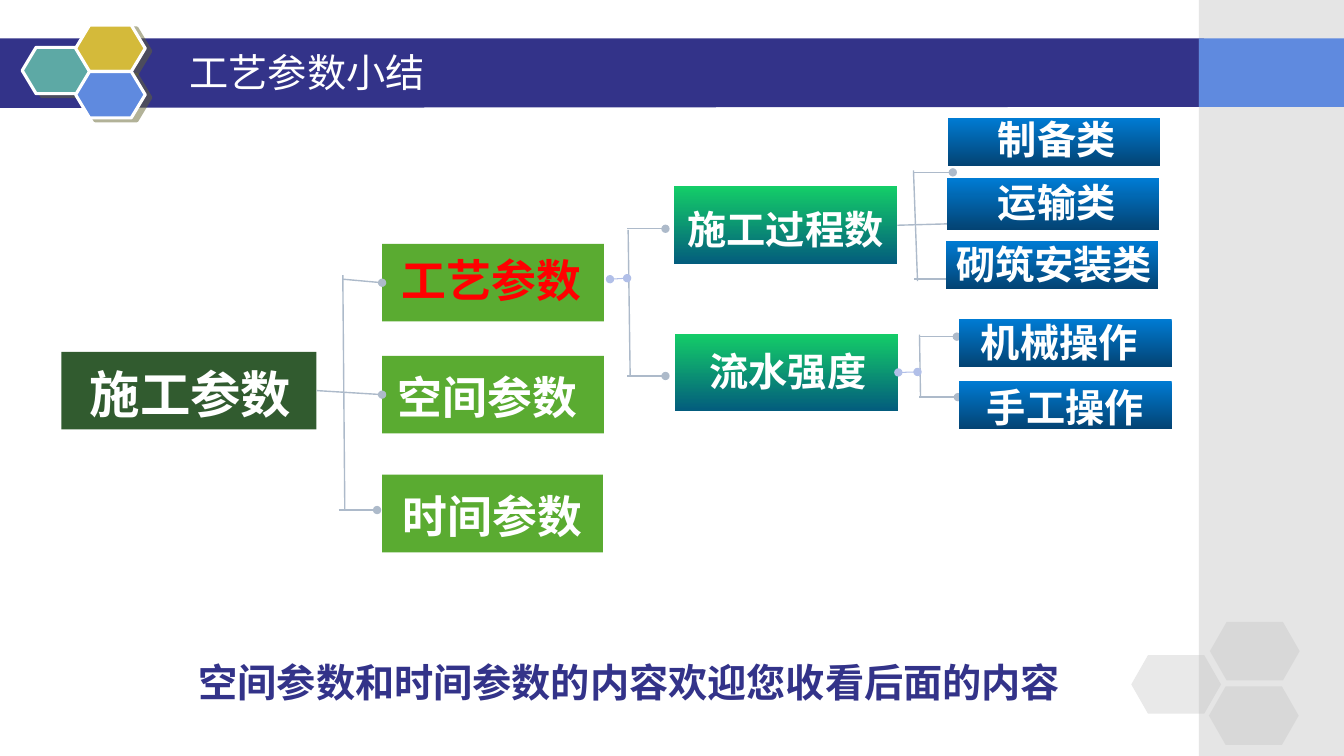
from lxml.etree import SubElement
from pptx import Presentation
from pptx.dml.color import RGBColor
from pptx.enum.shapes import MSO_CONNECTOR, MSO_SHAPE
from pptx.enum.text import MSO_ANCHOR, MSO_AUTO_SIZE, PP_ALIGN
from pptx.oxml.ns import qn
from pptx.util import Inches, Pt

COLS, ROWS = 133.3, 75
prs = Presentation()
prs.slide_width, prs.slide_height = Inches(13.33), Inches(7.5)
COL, ROW = prs.slide_width / COLS, prs.slide_height / ROWS
CJK, SERIF = "Noto Sans CJK SC", "Times New Roman"
NAVY, WHITE, SILVER, BLUE = "333389", "FFFFFF", "C0C0C0", "5F8ADF"
LINK, JOINT = "ADBACA", "B1BFE8"
LEAF = ("007BD3", "034373")
BRANCH = ("14CD68", "035C7D")
GREEN = ("5AAB31",)


def rgb(color):
    return RGBColor.from_string(color)


def place(box, x, y):
    return round((box[0] + x) * COL), round((box[1] + y) * ROW)


def frame(box, x, y, w, h):
    return *place(box, x, y), round(w * COL), round(h * ROW)


def set_alpha(color_el, percent):
    SubElement(color_el, qn("a:alpha")).set("val", str(percent * 1000))


def add_shape(s, kind, rect, fill, alpha=None):
    sp = s.shapes.add_shape(kind, *rect)
    sp.shadow.inherit = False
    sp.line.fill.background()
    if len(fill) == 2:
        sp.fill.gradient()
        sp.fill.gradient_angle = 270
        for stop, color, pos in zip(sp.fill.gradient_stops, fill, (0, 1)):
            stop.color.rgb = rgb(color)
            stop.position = pos
    else:
        sp.fill.solid()
        sp.fill.fore_color.rgb = rgb(fill[0])
    if alpha:
        set_alpha(sp._element.spPr.find(".//" + qn("a:srgbClr")), alpha)
    return sp


def add_run(p, text, size, color, font, bold):
    r = p.add_run()
    r.text = text
    r.font.size, r.font.bold, r.font.name = Pt(size), bold, font
    r.font.color.rgb = rgb(color)
    SubElement(r._r.get_or_add_rPr(), qn("a:ea")).set("typeface", CJK)


def add_label(s, rect, text, size, color, align=PP_ALIGN.CENTER, spacing=None):
    tf = s.shapes.add_textbox(*rect).text_frame
    tf.word_wrap = True
    tf.margin_left = tf.margin_right = tf.margin_top = tf.margin_bottom = 0
    p = tf.paragraphs[0]
    p.alignment, p.line_spacing = align, spacing
    add_run(p, text, size, color, SERIF, True)


def add_link(s, box, start, end, color=LINK, width=1, head=False, tail=False):
    c = s.shapes.add_connector(MSO_CONNECTOR.STRAIGHT, *place(box, *start), *place(box, *end))
    c.line.color.rgb = rgb(color)
    c.line.width = Pt(width)
    ln = c._element.spPr.find(qn("a:ln"))
    for tag, shown in (("a:headEnd", head), ("a:tailEnd", tail)):
        if shown:
            SubElement(ln, qn(tag)).set("type", "oval")
    SubElement(c._element.spPr, qn("a:effectLst"))
    return c


def add_side_panel(s, box):
    _, _, w, h = box
    add_shape(s, MSO_SHAPE.RECTANGLE, frame(box, 0, 0, w, h), (SILVER,), 40)
    add_shape(s, MSO_SHAPE.RECTANGLE, frame(box, 0, 3.8, w, 6.8), (BLUE,))
    for x, y in ((-6.7, 65), (1.1, 61.7), (1, 68.1)):
        sp = add_shape(s, MSO_SHAPE.HEXAGON, frame(box, x, y, 8.9, 5.8), (SILVER,), 35)
        sp.adjustments[0] = 0.286


def add_band(s, box):
    _, _, w, h = box
    fb = s.shapes.build_freeform(*place(box, 0, 0))
    fb.add_line_segments([place(box, w, 0), place(box, w - 0.1, h - 0.1), place(box, 0, h)])
    sp = fb.convert_to_shape()
    sp.shadow.inherit = False
    sp.fill.solid()
    sp.fill.fore_color.rgb = rgb(NAVY)
    sp.line.fill.background()


def add_emblem(s, box):
    for x, y, color in ((0, 2.2, "5DA9A5"), (5.3, 0, "D4BA3A"), (5.3, 4.6, BLUE)):
        sp = add_shape(s, MSO_SHAPE.HEXAGON, frame(box, x, y, 6.9, 4.6), (color,))
        sp.adjustments[0] = 0.3
        sp.line.color.rgb = rgb(WHITE)
        sp.line.width = Pt(2.25)
        shadow = SubElement(sp._element.spPr.find(qn("a:effectLst")), qn("a:outerShdw"))
        for key, val in (("dist", Pt(4.5)), ("dir", 27 * 60000), ("algn", "ctr"), ("rotWithShape", 0)):
            shadow.set(key, str(val))
        tint = SubElement(shadow, qn("a:srgbClr"))
        tint.set("val", "666633")
        set_alpha(tint, 50)


def add_title(s, box, text):
    title = s.shapes.title
    title.left, title.top, title.width, title.height = frame(box, 0, 0, *box[2:])
    tf = title.text_frame
    tf.auto_size, tf.word_wrap = MSO_AUTO_SIZE.NONE, True
    tf.vertical_anchor = MSO_ANCHOR.MIDDLE
    p = tf.paragraphs[0]
    p.alignment = PP_ALIGN.LEFT
    add_run(p, text, 28, WHITE, CJK, False)
    s.shapes._spTree.append(title._element)


def add_nodes(s, box, rows):
    nodes = {}
    for text, x, y, w, h, fill, size, color, dx, dy in rows:
        nodes[text] = add_shape(s, MSO_SHAPE.RECTANGLE, frame(box, x, y, w, h), fill)
        add_label(s, frame(box, x + dx, y + dy, w, size / 6), text, size, color)
    return nodes


def add_tree(s, box):
    nodes = add_nodes(s, box, (
        ("施工参数", 0.1, 23.9, 25.3, 7.7, ("315B2F",), 36, WHITE, 0.15, 1.1),
        ("工艺参数", 31.9, 13.2, 22, 7.7, GREEN, 32, "FF0000", -0.15, 0.9),
        ("空间参数", 31.9, 24.3, 22, 7.7, GREEN, 32, WHITE, -0.55, 1.4),
        ("时间参数", 31.9, 36.1, 21.9, 7.7, GREEN, 32, WHITE, 0, 1.4),
        ("施工过程数", 60.8, 7.5, 22.2, 7.7, BRANCH, 28, WHITE, 0, 1.9),
        ("流水强度", 60.9, 22.1, 22.2, 7.7, BRANCH, 28, WHITE, 0.15, 1.4),
    ))
    for start, end in (((28, 16.3), (28.2, 39.5)), ((56.3, 11.8), (56.5, 26.3)),
                       ((84.6, 5.9), (85, 16.9)), ((85.2, 22.2), (85.3, 28.4))):
        add_link(s, box, start, end)
    for x, y in ((27.6, 39.6), (56.2, 11.7), (56.2, 26.3), (84.7, 6.1),
                 (84.7, 16.7), (85.1, 22.4), (85.2, 28.4)):
        add_link(s, box, (x, y), (x + 3.8, y), tail=True)
    c = add_link(s, box, (25.4, 28.3), (31.9, 28.3), tail=True)
    c.begin_connect(nodes["施工参数"], 3)
    c.end_connect(nodes["空间参数"], 1)
    c = add_link(s, box, (28, 16.7), (31.9, 16.7), tail=True)
    c.end_connect(nodes["工艺参数"], 1)
    c = add_link(s, box, (82.4, 11.1), (88.3, 11.2), tail=True)
    c.begin_connect(nodes["施工过程数"], 3)
    add_link(s, box, (56.2, 16.6), (54.5, 16.7), JOINT, 0.75, True, True)
    c = add_link(s, box, (85, 25.9), (83.3, 26), JOINT, 0.75, True, True)
    c.end_connect(nodes["流水强度"], 3)
    add_nodes(s, box, [(text, x, y, 21.1, h, LEAF, 28, WHITE, dx, dy) for text, x, y, h, dx, dy in (
        ("制备类", 88, 0.7, 4.8, 0.25, -0.3),
        ("运输类", 87.9, 6.7, 5.1, 0.35, 0),
        ("砌筑安装类", 87.8, 12.9, 4.8, 0.2, -0.1),
        ("机械操作", 89.1, 20.6, 4.8, -0.6, 0),
        ("手工操作", 89.1, 26.8, 4.8, 0, 0.2),
    )])


def add_note(s, box, text):
    add_label(s, frame(box, 0, 0, *box[2:]), text, 28, NAVY, PP_ALIGN.LEFT, 1.5)


def main():
    s = prs.slides.add_slide(prs.slide_layouts[5])
    add_band(s, (-0.1, 3.8, 119.5, 6.9))
    add_side_panel(s, (118.9, 0, 14.4, ROWS))
    add_emblem(s, (2.2, 2.5, 12.2, 9.2))
    add_tree(s, (6, 11, 111, 45))
    add_note(s, (19.7, 63, 102.6, 7.1), "空间参数和时间参数的内容欢迎您收看后面的内容")
    add_title(s, (17.8, 4.2, 96.7, 5.8), "工艺参数小结")
    prs.save("out.pptx")


if __name__ == "__main__":
    main()
